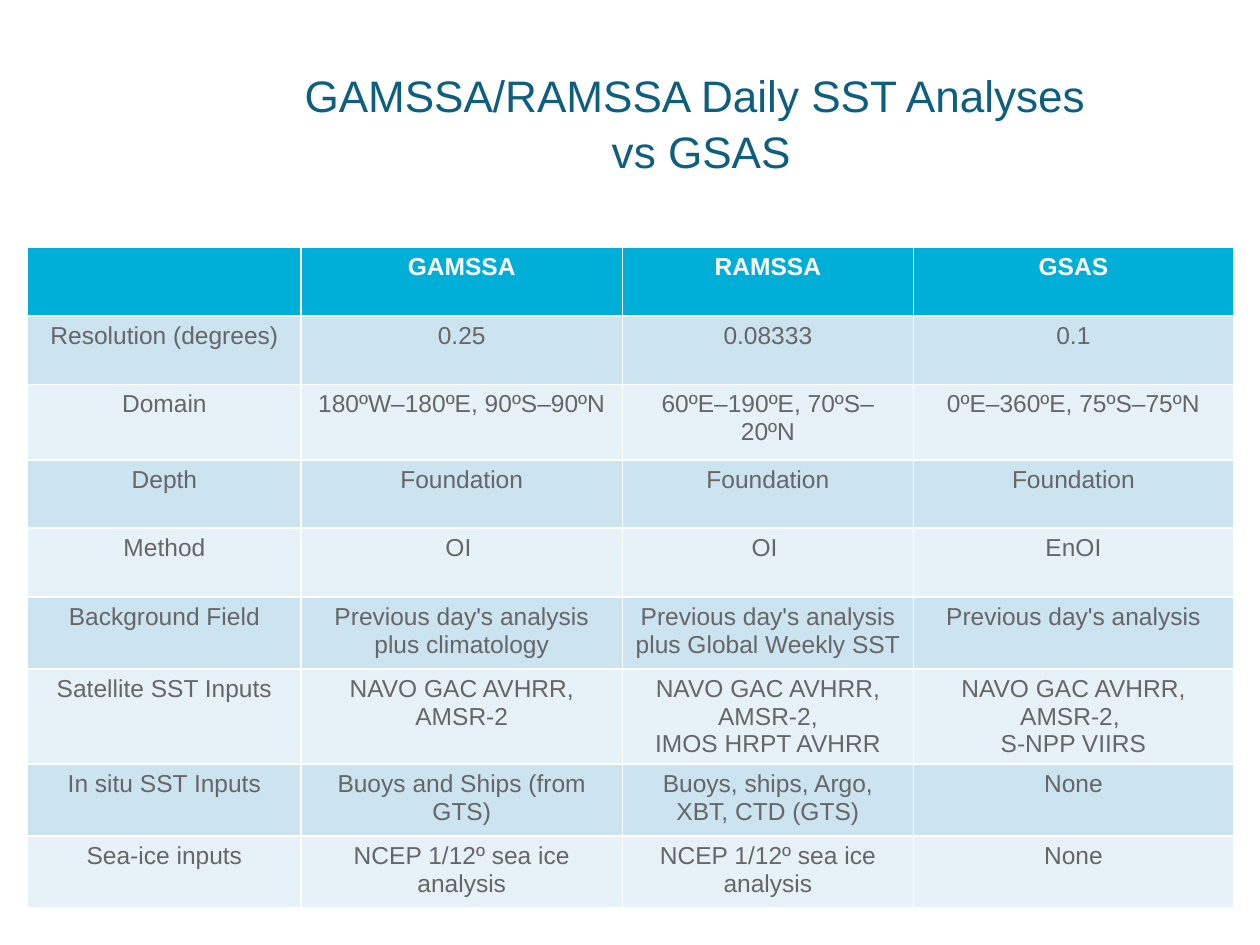
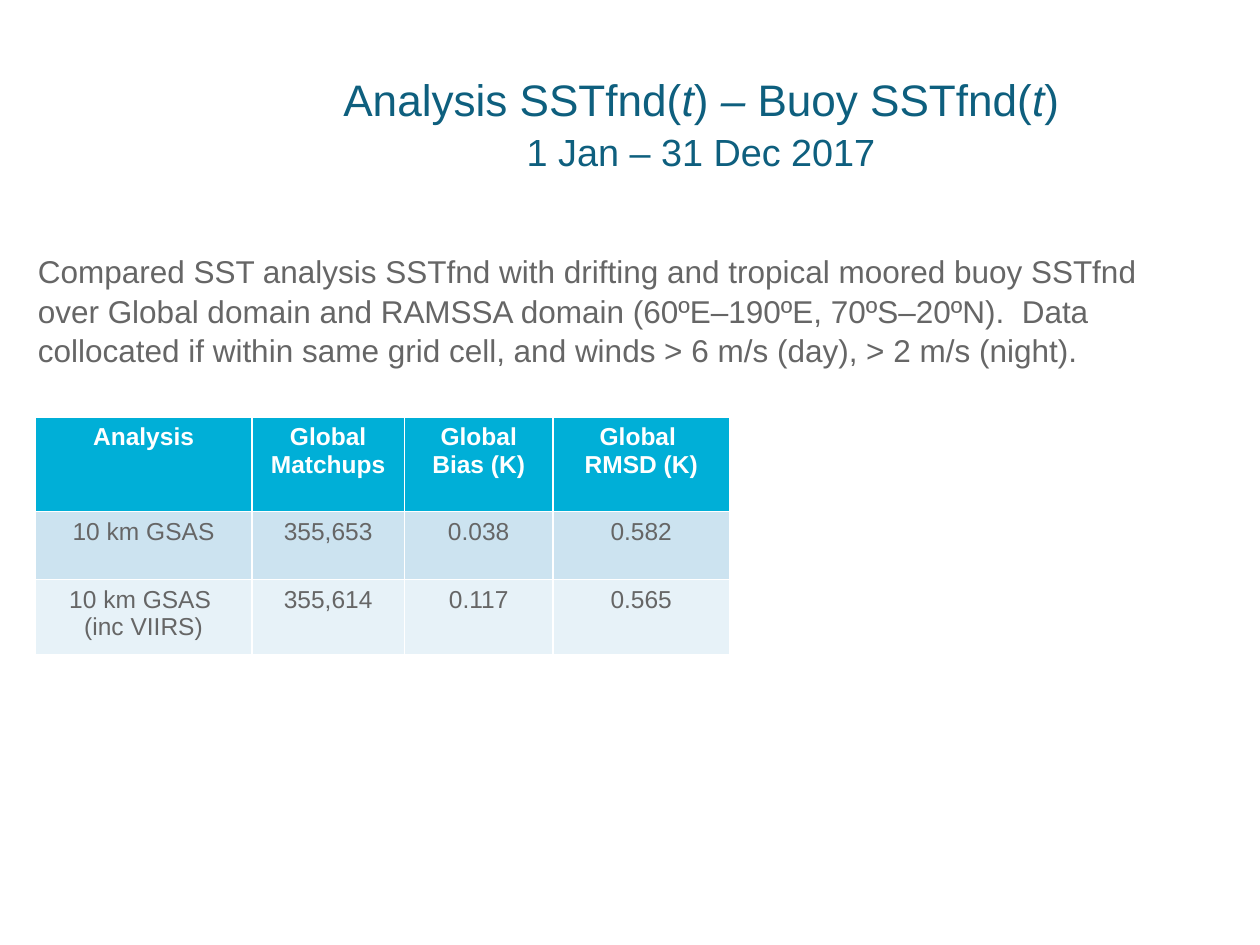
"""Build two slides comparing daily sea surface temperature analyses."""
from copy import deepcopy

from pptx import Presentation
from pptx.dml.color import RGBColor
from pptx.enum.text import MSO_ANCHOR, MSO_AUTO_SIZE, PP_ALIGN
from pptx.oxml.ns import qn
from pptx.util import Inches, Pt

TITLE_BLUE = RGBColor(0x0E, 0x5F, 0x7E)
HEADER_BLUE = RGBColor(0x00, 0xAF, 0xD7)
BAND_DARK = RGBColor(0xCC, 0xE3, 0xF0)
BAND_LIGHT = RGBColor(0xE7, 0xF2, 0xF8)
TEXT_GREY = RGBColor(0x66, 0x66, 0x66)
WHITE = RGBColor(0xFF, 0xFF, 0xFF)

TITLE_FORMAT = {"name": "Arial", "size": Pt(25.2), "bold": False}
SUBTITLE_FORMAT = {**TITLE_FORMAT, "size": Pt(21.6)}
ITALIC_FORMAT = {**TITLE_FORMAT, "italic": True}
BODY_FORMAT = {"name": "Arial", "size": Pt(18)}
CELL_FORMAT = {"name": "Arial", "size": Pt(14), "bold": False}
HEADER_FORMAT = {**CELL_FORMAT, "bold": True}

TITLE_ONLY, TITLE_AND_BODY = 5, 1


def format_run(run, values, color):
    for attribute, value in values.items():
        setattr(run.font, attribute, value)
    run.font.color.rgb = color


def place_text(shape, left, top, width, height, anchor):
    shape.left, shape.top = Inches(left), Inches(top)
    shape.width, shape.height = Inches(width), Inches(height)
    frame = shape.text_frame
    frame.word_wrap = True
    frame.auto_size = MSO_AUTO_SIZE.NONE
    frame.vertical_anchor = anchor
    paragraph = frame.paragraphs[0]
    paragraph.space_before = Pt(0)
    return paragraph


contents = [
    {
        "layout": TITLE_ONLY,
        "title": [
            [("GAMSSA/RAMSSA Daily SST Analyses ", TITLE_FORMAT)],
            [("vs GSAS", TITLE_FORMAT)],
        ],
        "table_at": (0.22, 1.96),
        "columns": [2.17, 2.55, 2.31, 2.54],
        "heights": [0.55, 0.54, 0.6, 0.54, 0.55, 0.57, 0.57, 0.57, 0.57],
        "rows": [
            ["", "GAMSSA", "RAMSSA", "GSAS"],
            ["Resolution (degrees)", "0.25", "0.08333", "0.1"],
            ["Domain", "180ºW–180ºE, 90ºS–90ºN", "60ºE–190ºE, 70ºS–20ºN",
             "0ºE–360ºE, 75ºS–75ºN"],
            ["Depth", "Foundation", "Foundation", "Foundation"],
            ["Method", "OI ", "OI ", "EnOI"],
            ["Background Field", "Previous day's analysis plus climatology",
             "Previous day's analysis plus Global Weekly SST",
             "Previous day's analysis"],
            ["Satellite SST Inputs", "NAVO GAC AVHRR, AMSR-2",
             "NAVO GAC AVHRR, AMSR-2,\nIMOS HRPT AVHRR",
             "NAVO GAC AVHRR, AMSR-2, \nS-NPP VIIRS"],
            ["In situ SST Inputs", "Buoys and Ships (from GTS)",
             "Buoys, ships, Argo, XBT, CTD (GTS)", "None"],
            ["Sea-ice inputs", "NCEP 1/12º sea ice analysis",
             "NCEP 1/12º sea ice analysis", "None"],
        ],
    },
    {
        "layout": TITLE_AND_BODY,
        "title": [
            [("Analysis SSTfnd(", TITLE_FORMAT), ("t", ITALIC_FORMAT),
             (") ", TITLE_FORMAT), ("–", ITALIC_FORMAT),
             (" Buoy SSTfnd(", TITLE_FORMAT), ("t", ITALIC_FORMAT),
             (")", TITLE_FORMAT)],
            [("1 Jan – 31 Dec 2017", SUBTITLE_FORMAT)],
        ],
        "body": "Compared SST analysis SSTfnd with drifting and tropical moored "
                "buoy SSTfnd over Global domain and RAMSSA domain (60ºE–190ºE, "
                "70ºS–20ºN).  Data collocated if within same grid cell, and "
                "winds > 6 m/s (day), > 2 m/s (night).",
        "table_at": (0.28, 3.31),
        "columns": [1.72, 1.21, 1.18, 1.4],
        "heights": [0.75, 0.54, 0.6],
        "rows": [
            ["Analysis", "Global\nMatchups", "Global\nBias (K)", "Global \nRMSD (K)"],
            ["10 km GSAS", "355,653", "0.038", "0.582"],
            ["10 km GSAS \n(inc VIIRS)", "355,614", "0.117", "0.565"],
        ],
    },
]

presentation = Presentation()
presentation.slide_width, presentation.slide_height = Inches(10), Inches(7.5)

for content in contents:
    slide = presentation.slides.add_slide(presentation.slide_layouts[content["layout"]])

    title = place_text(slide.shapes.title, 1.93, 0.53, 7.27, 0.87, MSO_ANCHOR.MIDDLE)
    title.alignment = PP_ALIGN.CENTER
    title.line_spacing = 1.06
    for line_index, line in enumerate(content["title"]):
        if line_index:
            title.add_line_break()
        for text, values in line:
            run = title.add_run()
            run.text = text
            format_run(run, values, TITLE_BLUE)
    for line_break in title._p.findall(qn("a:br")):
        line_break.append(deepcopy(title.runs[0]._r.rPr))

    if "body" in content:
        body = place_text(slide.placeholders[1], 0.2, 1.94, 9.45, 4.2, MSO_ANCHOR.TOP)
        body.line_spacing = 1.04
        properties = body._p.get_or_add_pPr()
        properties.set("marL", "0")
        properties.set("indent", "0")
        properties.append(properties.makeelement(qn("a:buNone"), {}))
        run = body.add_run()
        run.text = content["body"]
        format_run(run, BODY_FORMAT, TEXT_GREY)

    left, top = content["table_at"]
    rows, columns, heights = content["rows"], content["columns"], content["heights"]
    table = slide.shapes.add_table(
        len(rows), len(columns), Inches(left), Inches(top),
        Inches(sum(columns)), Inches(sum(heights))).table
    for column, width in zip(table.columns, columns):
        column.width = Inches(width)
    for row_index, (row, height, texts) in enumerate(zip(table.rows, heights, rows)):
        row.height = Inches(height)
        if row_index == 0:
            fill, values, color = HEADER_BLUE, HEADER_FORMAT, WHITE
        else:
            fill = BAND_DARK if row_index % 2 else BAND_LIGHT
            values, color = CELL_FORMAT, TEXT_GREY
        for cell, text in zip(row.cells, texts):
            cell.fill.solid()
            cell.fill.fore_color.rgb = fill
            cell.text = text
            for paragraph in cell.text_frame.paragraphs:
                paragraph.alignment = PP_ALIGN.CENTER
                for run in paragraph.runs:
                    format_run(run, values, color)

presentation.save("out.pptx")
